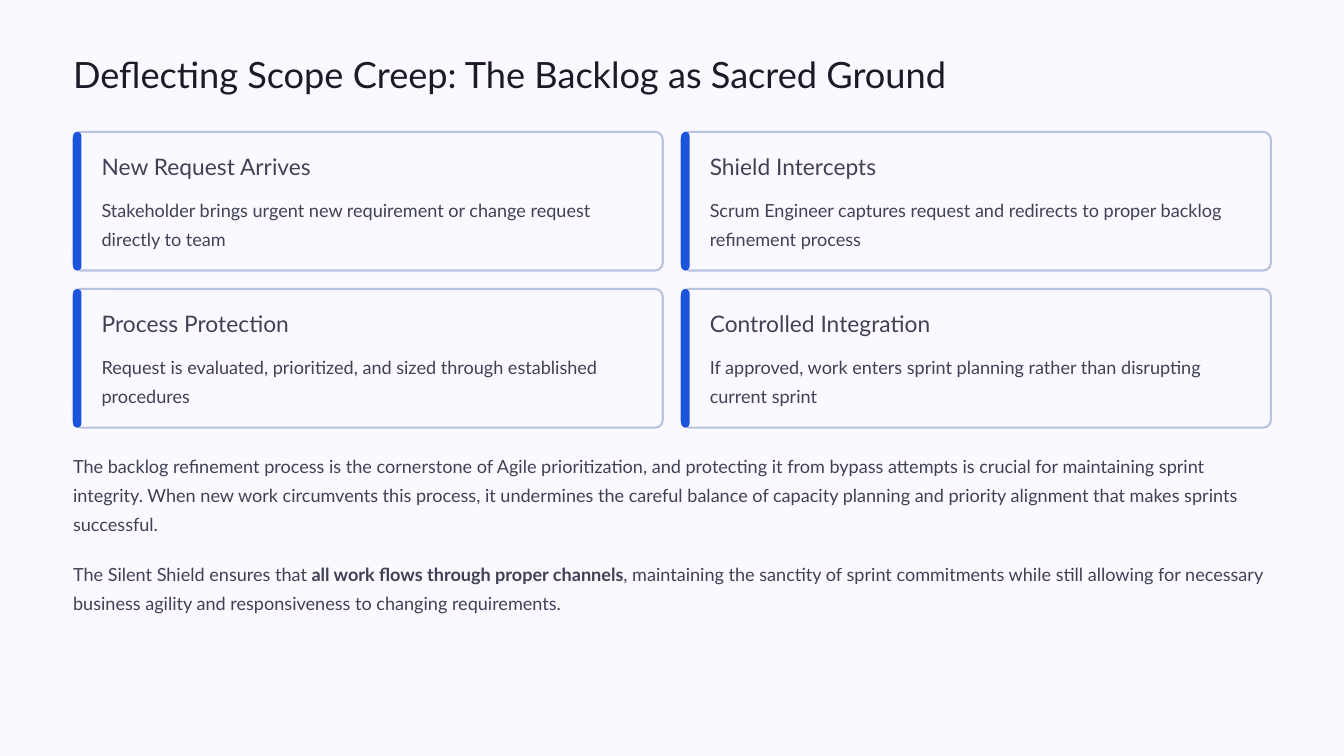
from dataclasses import dataclass

from lxml import etree
from pptx import Presentation
from pptx import util as u
from pptx.dml.color import RGBColor
from pptx.enum import shapes, text
from pptx.oxml.ns import qn

PAPER = RGBColor(0xF9, 0xF9, 0xFF)
INK = RGBColor(0x1B, 0x1B, 0x27)
SLATE = RGBColor(0x40, 0x41, 0x55)
OUTLINE = RGBColor(0xB8, 0xC3, 0xDF)
ACCENT = RGBColor(0x1B, 0x54, 0xDA)
FONT = "Lato"

# Page grid, in inches
PAGE_W, PAGE_H = 16, 9
MARGIN = 0.87
CONTENT_W = PAGE_W - 2 * MARGIN
COLUMNS = 2
GUTTER = 0.22
CARD_W = (CONTENT_W - GUTTER * (COLUMNS - 1)) / COLUMNS
CARD_H = 1.65
CARDS_TOP = 1.57
BAR_W = 0.1
CORNER = 0.09
PAD_X, PAD_Y = 0.34, 0.24


@dataclass(frozen=True)
class Box:
    left: float
    top: float
    width: float
    height: float

    def emu(self) -> list[int]:
        return [u.Inches(n) for n in (self.left, self.top, self.width, self.height)]


@dataclass(frozen=True)
class Style:
    size: float
    leading: float
    color: RGBColor


@dataclass(frozen=True)
class Step:
    heading: str
    detail: str


TITLE = Style(31, 39, INK)
HEADING = Style(19.5, 24, SLATE)
BODY = Style(15.5, 25, SLATE)

STEPS = [
    Step("New Request Arrives",
         "Stakeholder brings urgent new requirement or change request directly to team"),
    Step("Shield Intercepts",
         "Scrum Engineer captures request and redirects to proper backlog refinement process"),
    Step("Process Protection",
         "Request is evaluated, prioritized, and sized through established procedures"),
    Step("Controlled Integration",
         "If approved, work enters sprint planning rather than disrupting current sprint"),
]

CORNERSTONE = (
    "The backlog refinement process is the cornerstone of Agile prioritization, and "
    "protecting it from bypass attempts is crucial for maintaining sprint integrity. "
    "When new work circumvents this process, it undermines the careful balance of "
    "capacity planning and priority alignment that makes sprints successful."
)
# Each run is its wording and whether it is bold
SHIELD_PROMISE = [
    ("The Silent Shield ensures that ", False),
    ("all work flows through proper channels", True),
    (", maintaining the sanctity of sprint commitments while still allowing for "
     "necessary business agility and responsiveness to changing requirements.", False),
]


def prepare_frame(frame, wrap: bool = True) -> None:
    frame.margin_left = frame.margin_top = frame.margin_right = frame.margin_bottom = 0
    frame.auto_size = text.MSO_AUTO_SIZE.NONE
    frame.vertical_anchor = text.MSO_ANCHOR.TOP
    frame.word_wrap = wrap


def format_paragraph(paragraph, style: Style, before: float = 0) -> None:
    paragraph.alignment = text.PP_ALIGN.LEFT
    paragraph.line_spacing = u.Pt(style.leading)
    paragraph.space_before = u.Pt(before)
    paragraph.font.name = FONT
    paragraph.font.size = u.Pt(style.size)
    paragraph.font.color.rgb = style.color


def remove_bullet(paragraph) -> None:
    properties = paragraph._p.get_or_add_pPr()
    properties.set("marL", "0")
    properties.set("indent", "0")
    no_bullet = etree.Element(qn("a:buNone"))
    properties.find(qn("a:defRPr")).addprevious(no_bullet)


def place(placeholder, box: Box) -> None:
    placeholder.left, placeholder.top, placeholder.width, placeholder.height = box.emu()


def add_label(slide, box: Box, wording: str, style: Style, wrap: bool = True) -> None:
    frame = slide.shapes.add_textbox(*box.emu()).text_frame
    prepare_frame(frame, wrap)
    frame.text = wording
    format_paragraph(frame.paragraphs[0], style)


def add_panel(slide, box: Box, fill: RGBColor, rounding: float,
              outline: RGBColor | None = None) -> None:
    panel = slide.shapes.add_shape(shapes.MSO_SHAPE.ROUNDED_RECTANGLE, *box.emu())
    panel.shadow.inherit = False
    panel.adjustments[0] = rounding
    panel.fill.solid()
    panel.fill.fore_color.rgb = fill
    if outline is None:
        panel.line.fill.background()
    else:
        panel.line.color.rgb = outline
        panel.line.width = u.Pt(1.8)


def add_card(slide, step: Step, left: float, top: float) -> None:
    inner_left, inner_w = left + PAD_X, CARD_W - PAD_X - PAD_Y
    add_panel(slide, Box(left, top, CARD_W, CARD_H), PAPER, CORNER / CARD_H, OUTLINE)
    add_panel(slide, Box(left, top, BAR_W, CARD_H), ACCENT, 0.5)
    add_label(slide, Box(inner_left, top + PAD_Y, inner_w, 0.34),
              step.heading, HEADING, wrap=False)
    add_label(slide, Box(inner_left, top + 0.71, inner_w, 0.69), step.detail, BODY)


def main() -> None:
    deck = Presentation()
    deck.slide_width, deck.slide_height = u.Inches(PAGE_W), u.Inches(PAGE_H)
    slide = deck.slides.add_slide(deck.slide_layouts[1])
    slide.background.fill.solid()
    slide.background.fill.fore_color.rgb = PAPER

    # Title
    title = slide.shapes.title
    place(title, Box(MARGIN, 0.6, CONTENT_W, 0.54))
    prepare_frame(title.text_frame, wrap=False)
    title.text_frame.text = "Deflecting Scope Creep: The Backlog as Sacred Ground"
    format_paragraph(title.text_frame.paragraphs[0], TITLE)

    # Four step cards
    for index, step in enumerate(STEPS):
        row, column = divmod(index, COLUMNS)
        add_card(slide, step, MARGIN + column * (CARD_W + GUTTER),
                 CARDS_TOP + row * (CARD_H + GUTTER))

    # Closing paragraphs
    closing = slide.placeholders[1]
    place(closing, Box(MARGIN, 5.33, CONTENT_W, 1.98))
    prepare_frame(closing.text_frame)
    cornerstone = closing.text_frame.paragraphs[0]
    cornerstone.text = CORNERSTONE
    promise = closing.text_frame.add_paragraph()
    for wording, bold in SHIELD_PROMISE:
        run = promise.add_run()
        run.text = wording
        if bold:
            run.font.bold = True
    for paragraph, before in ((cornerstone, 0), (promise, 18)):
        format_paragraph(paragraph, BODY, before)
        remove_bullet(paragraph)

    deck.save("out.pptx")


if __name__ == "__main__":
    main()
